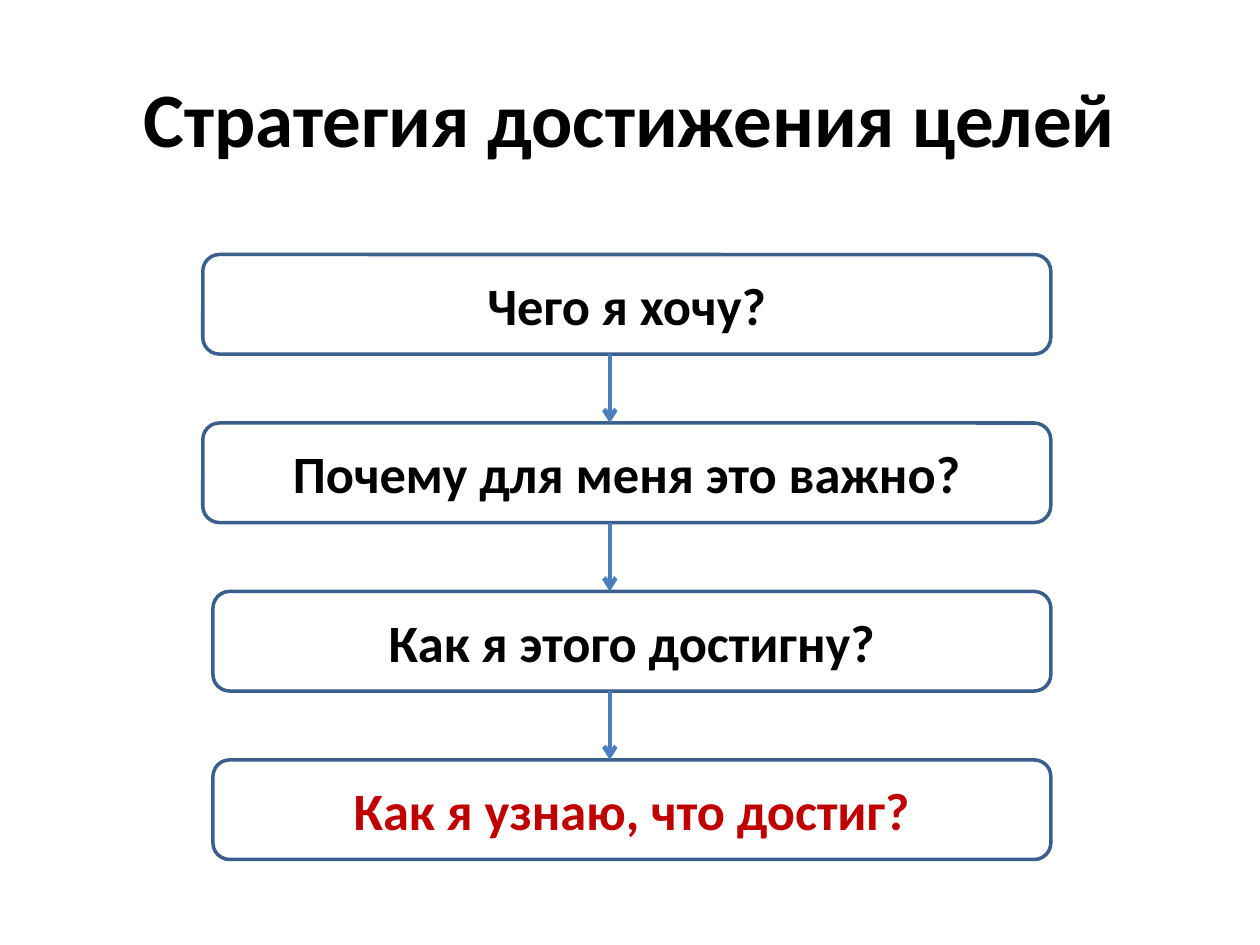
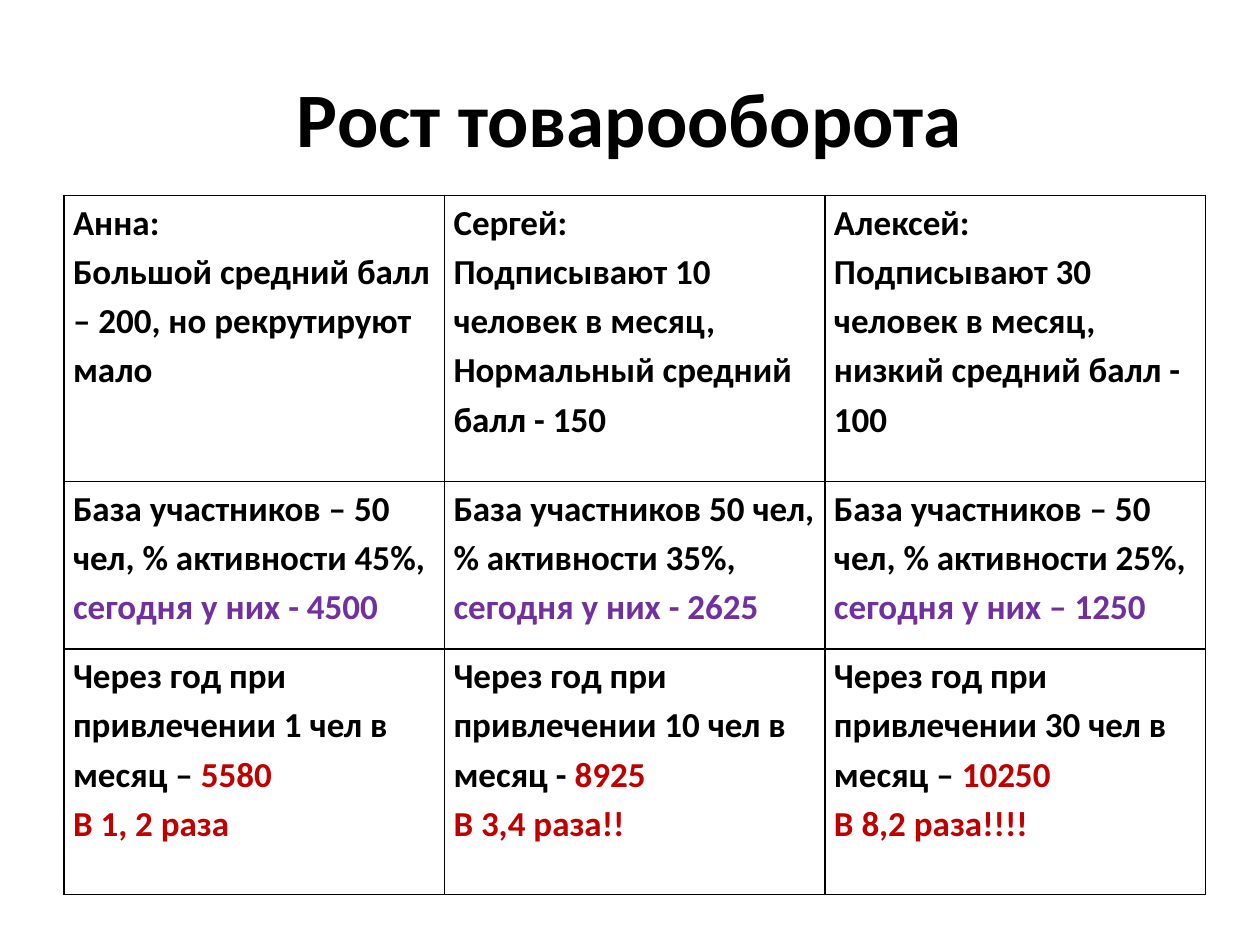
from lxml.etree import SubElement
from pptx import Presentation
from pptx.dml.color import RGBColor
from pptx.enum.shapes import MSO_CONNECTOR as CONN, MSO_SHAPE as SHAPE
from pptx.enum.text import MSO_ANCHOR as ANCHOR, PP_ALIGN as ALIGN
from pptx.oxml.ns import qn
from pptx.util import Inches, Pt

FONT = "Calibri"
BLACK = RGBColor(0x00, 0x00, 0x00)
RED = RGBColor(0xC0, 0x00, 0x00)
PURPLE = RGBColor(0x70, 0x30, 0xA0)
BOX_LINE = RGBColor(0x3A, 0x5F, 0x8C)
ARROW_BLUE = RGBColor(0x4B, 0x7E, 0xBC)

BOX_RIGHT, BOX_TOP, BOX_HEIGHT, BOX_STEP = 8.34, 2.02, 0.79, 1.337
ARROW_X = 4.84

# Question, left edge of its box, text colour
QUESTIONS = [
    ("Чего я хочу?", 1.61, BLACK),
    ("Почему для меня это важно?", 1.61, BLACK),
    ("Как я этого достигну?", 1.69, BLACK),
    ("Как я узнаю, что достиг?", 1.69, RED),
]

COLUMN_WIDTH = 3.02
ROW_HEIGHTS = [2.27, 1.33, 1.95]

# Rows of cells; a cell is a list of paragraphs, a paragraph a list of (text, colour)
GROWTH = [
    [
        [[("Анна:", BLACK)],
         [("Большой средний балл – 200, но рекрутируют мало", BLACK)]],
        [[("Сергей:", BLACK)],
         [("Подписывают 10 человек в месяц,", BLACK)],
         [("Нормальный средний балл - 150", BLACK)]],
        [[("Алексей:", BLACK)],
         [("Подписывают 30 человек в месяц, низкий средний балл - 100", BLACK)]],
    ],
    [
        [[("База участников – 50 чел, % активности 45%, ", BLACK),
          ("сегодня у них - 4500", PURPLE)]],
        [[("База участников 50 чел, % активности 35%, ", BLACK),
          ("сегодня у них - 2625", PURPLE)]],
        [[("База участников – 50 чел, % активности 25%, ", BLACK),
          ("сегодня у них – 1250", PURPLE)]],
    ],
    [
        [[("Через год при привлечении 1 чел в месяц – ", BLACK), ("5580", RED)],
         [("В 1, 2 раза", RED)]],
        [[("Через год при привлечении 10 чел в месяц - ", BLACK), ("8925", RED)],
         [("В 3,4 раза!!", RED)]],
        [[("Через год при привлечении 30 чел в месяц – ", BLACK), ("10250", RED)],
         [("В 8,2 раза!!!!", RED)]],
    ],
]


def format_run(r, size, color):
    r.font.name = FONT
    r.font.size = Pt(size)
    r.font.bold = True
    r.font.color.rgb = color


def set_centred_text(sp, text, size, color):
    tf = sp.text_frame
    tf.word_wrap = True
    tf.vertical_anchor = ANCHOR.MIDDLE
    tf.text = text
    p = tf.paragraphs[0]
    p.alignment = ALIGN.CENTER
    format_run(p.runs[0], size, color)


def add_titled_slide(prs, title):
    slide = prs.slides.add_slide(prs.slide_layouts[5])
    sp = slide.shapes.title
    sp.left, sp.top = Inches(0.5), Inches(0.3)
    sp.width, sp.height = Inches(9), Inches(1.25)
    set_centred_text(sp, title, 44, BLACK)
    return slide


def add_question_box(slide, text, left, top, color):
    sp = slide.shapes.add_shape(SHAPE.ROUNDED_RECTANGLE, Inches(left), Inches(top),
                                Inches(BOX_RIGHT - left), Inches(BOX_HEIGHT))
    sp.shadow.inherit = False
    sp.fill.background()
    sp.line.color.rgb = BOX_LINE
    sp.line.width = Pt(2)
    set_centred_text(sp, text, 30, color)


def add_down_arrow(slide, x, top, bottom):
    line = slide.shapes.add_connector(CONN.STRAIGHT, Inches(x), Inches(top),
                                      Inches(x), Inches(bottom))
    line.line.color.rgb = ARROW_BLUE
    line.line.width = Pt(2.5)
    SubElement(line.line._get_or_add_ln(), qn("a:tailEnd"), type="arrow")
    SubElement(line._element.spPr, qn("a:effectLst"))


def set_borders(cell):
    tc_pr = cell._tc.get_or_add_tcPr()
    for side in ("a:lnL", "a:lnR", "a:lnT", "a:lnB"):
        ln = SubElement(tc_pr, qn(side), w=str(Pt(1)))
        fill = SubElement(ln, qn("a:solidFill"))
        SubElement(fill, qn("a:srgbClr"), val=str(BLACK))


def fill_cell(cell, paragraphs):
    cell.margin_left = cell.margin_right = Inches(0.07)
    cell.margin_top = cell.margin_bottom = 0
    set_borders(cell)
    cell.fill.background()
    tf = cell.text_frame
    for i, parts in enumerate(paragraphs):
        p = tf.add_paragraph() if i else tf.paragraphs[0]
        p.line_spacing = 1.15
        for text, color in parts:
            r = p.add_run()
            r.text = text
            format_run(r, 20, color)


def add_growth_table(slide, left, top):
    columns = len(GROWTH[0])
    frame = slide.shapes.add_table(len(GROWTH), columns, Inches(left), Inches(top),
                                   Inches(COLUMN_WIDTH * columns),
                                   Inches(sum(ROW_HEIGHTS)))
    table = frame.table
    table.first_row = table.horz_banding = False
    for column in table.columns:
        column.width = Inches(COLUMN_WIDTH)
    for row, height, cells in zip(table.rows, ROW_HEIGHTS, GROWTH):
        row.height = Inches(height)
        for cell, paragraphs in zip(row.cells, cells):
            fill_cell(cell, paragraphs)


def build_strategy_slide(prs):
    slide = add_titled_slide(prs, "Стратегия достижения целей")
    tops = [BOX_TOP + i * BOX_STEP for i in range(len(QUESTIONS))]
    for (text, left, color), top in zip(QUESTIONS, tops):
        add_question_box(slide, text, left, top, color)
    for top, next_top in zip(tops, tops[1:]):
        add_down_arrow(slide, ARROW_X, top + BOX_HEIGHT, next_top)


def build_growth_slide(prs):
    slide = add_titled_slide(prs, "Рост товарооборота")
    add_growth_table(slide, 0.51, 1.55)


def main():
    prs = Presentation()
    prs.slide_width, prs.slide_height = Inches(10), Inches(7.5)
    build_strategy_slide(prs)
    build_growth_slide(prs)
    prs.save("out.pptx")


if __name__ == "__main__":
    main()
